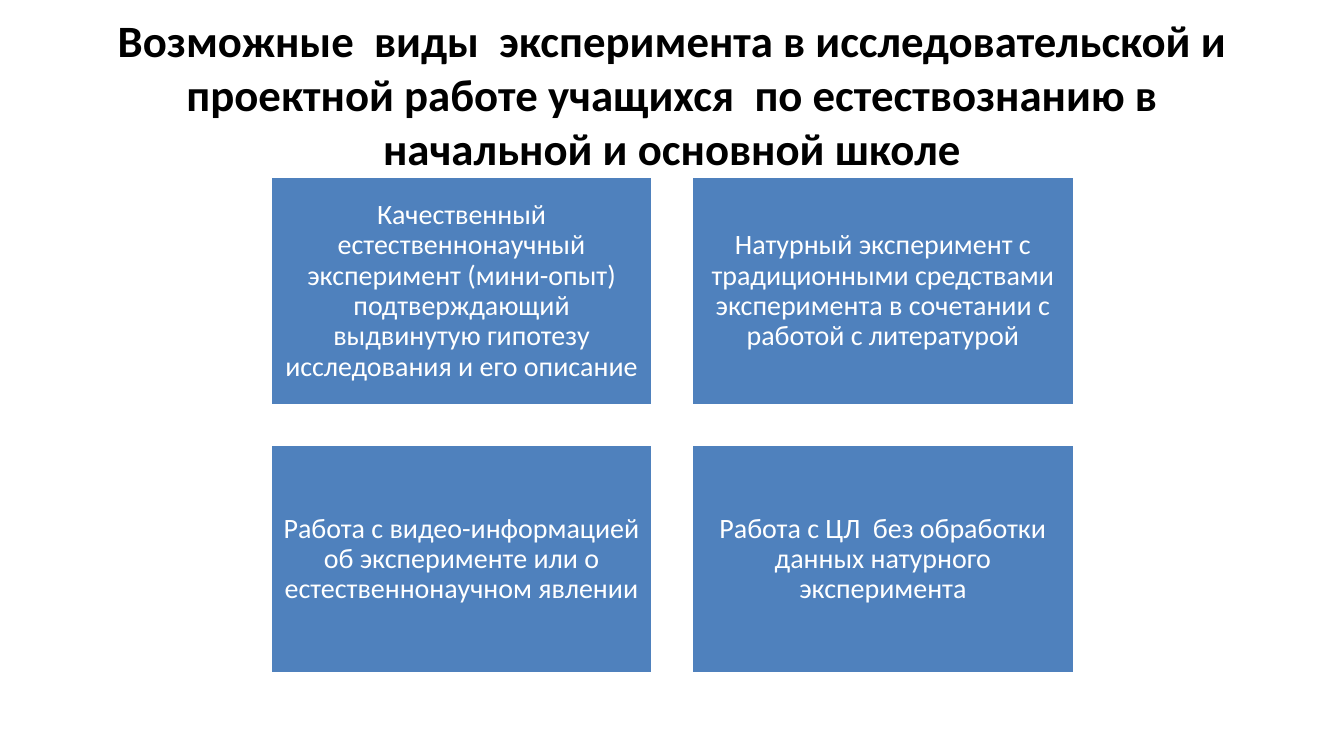
from dataclasses import dataclass

from pptx import Presentation
from pptx.dml.color import RGBColor
from pptx.enum import shapes, text
from pptx.util import Pt

BLUE = RGBColor(0x4F, 0x81, 0xBD)
WHITE = RGBColor(0xFF, 0xFF, 0xFF)
BLACK = RGBColor(0, 0, 0)

FONT = "Calibri"
TITLE = ("Возможные  виды  эксперимента в исследовательской и проектной "
         "работе учащихся  по естествознанию в начальной и основной школе")

# Grid of cards, in points
LEFT, TOP = 144.7, 94.5
WIDTH, HEIGHT = 205.2, 123.1
GAP = 20.5


@dataclass
class Card:
    row: int
    col: int
    label: str


CARDS = [
    Card(0, 0, "Качественный естественнонаучный эксперимент (мини-опыт) "
               "подтверждающий выдвинутую гипотезу исследования и его описание"),
    Card(0, 1, "Натурный эксперимент с традиционными средствами эксперимента "
               "в сочетании с работой с литературой"),
    Card(1, 0, "Работа с видео-информацией об эксперименте или о "
               "естественнонаучном явлении"),
    Card(1, 1, "Работа с ЦЛ  без обработки данных натурного эксперимента"),
]


def write(shape, label: str, size: float, color: RGBColor, bold: bool = False):
    """Put one centred paragraph into a shape and return the paragraph."""
    frame = shape.text_frame
    frame.word_wrap = True
    frame.vertical_anchor = text.MSO_ANCHOR.MIDDLE
    para = frame.paragraphs[0]
    para.text = label
    para.alignment = text.PP_ALIGN.CENTER
    font = para.font
    font.name, font.size, font.bold = FONT, Pt(size), bold
    font.color.rgb = color
    return para


def draw_card(slide, card: Card) -> None:
    x = LEFT + card.col * (WIDTH + GAP)
    y = TOP + card.row * (HEIGHT + GAP)
    box = slide.shapes.add_shape(shapes.MSO_SHAPE.RECTANGLE,
                                 Pt(x), Pt(y), Pt(WIDTH), Pt(HEIGHT))
    box.shadow.inherit = False
    box.fill.solid()
    box.fill.fore_color.rgb = BLUE
    box.line.color.rgb = WHITE
    box.line.width = Pt(2)
    frame = box.text_frame
    frame.margin_left = frame.margin_right = Pt(4.5)
    frame.margin_top = frame.margin_bottom = Pt(4.5)
    write(box, card.label, 15, WHITE).line_spacing = 0.9


def main() -> None:
    deck = Presentation()
    deck.slide_width, deck.slide_height = Pt(720), Pt(405)
    slide = deck.slides.add_slide(deck.slide_layouts[6])

    # Title
    head = slide.shapes.add_textbox(Pt(36), Pt(16.5), Pt(648), Pt(67.5))
    write(head, TITLE, 24, BLACK, bold=True)

    # Kinds of experiment
    for card in CARDS:
        draw_card(slide, card)

    deck.save("out.pptx")


if __name__ == "__main__":
    main()
